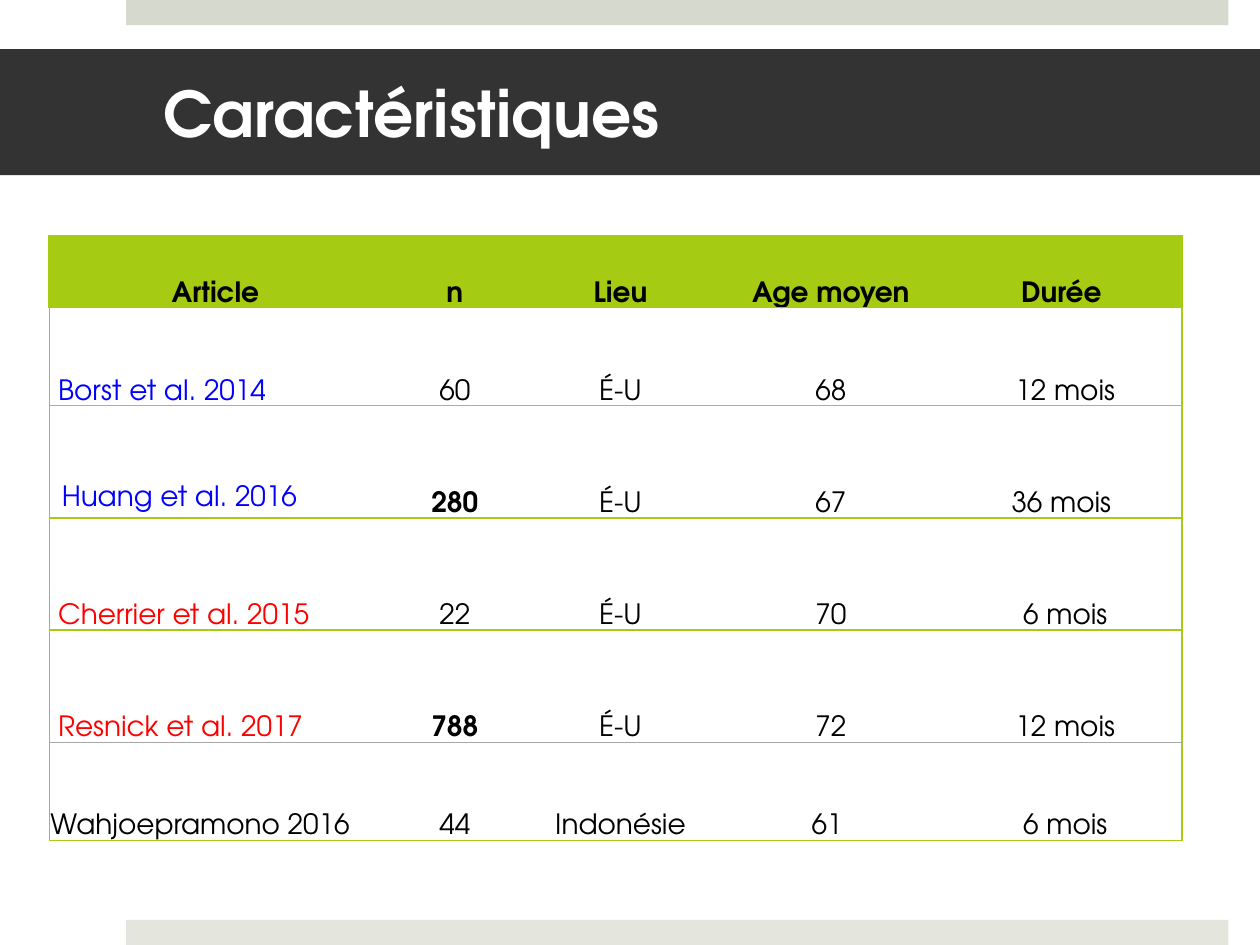
from dataclasses import dataclass
from typing import Optional

import pptx
import pptx.dml.color
import pptx.enum.shapes
import pptx.enum.text
import pptx.oxml
import pptx.oxml.ns
import pptx.util

Inches = pptx.util.Inches
Pt = pptx.util.Pt


@dataclass(frozen=True)
class Theme:
    font: str = "TeX Gyre Adventor"
    title_size: int = 36
    table_size: int = 16
    top_band: str = "D6D9CD"
    bottom_band: str = "E4E6DE"
    title_band: str = "333333"
    white: str = "FFFFFF"
    black: str = "000000"
    blue: str = "0000FF"
    red: str = "FF0000"
    green: str = "A5CC12"
    grey: str = "A6A6A6"


THEME = Theme()


@dataclass(frozen=True)
class Band:
    left: float
    top: float
    width: float
    height: float
    fill: str


@dataclass(frozen=True)
class Study:
    values: tuple[str, ...]
    height: float
    article_color: str = THEME.black
    bold_n: bool = False
    padded_article: bool = False


@dataclass(frozen=True)
class Border:
    color: str
    width: float


RULE = Border(THEME.green, 1)
HAIRLINE = Border(THEME.grey, 0.5)

TOP_BAND = Band(1, 0, 8.75, 0.2, THEME.top_band)
BOTTOM_BAND = Band(1, 7.3, 8.75, 0.2, THEME.bottom_band)
TITLE_BAND = Band(0, 0.39, 10, 1, THEME.title_band)

HEADINGS = ("Article", "n", "Lieu", "Age moyen", "Durée ")
HEADING_HEIGHT = 0.57
COLUMN_WIDTHS = (2.64, 1.16, 1.47, 1.87, 1.85)
STUDIES = (
    Study((" Borst et al. 2014", "60", "É-U", "68", "12 mois"), 0.78, THEME.blue),
    Study(("Huang et al. 2016", "280", "É-U", "67", "36 mois "), 0.89, THEME.blue,
          bold_n=True, padded_article=True),
    Study((" Cherrier et al. 2015", "22", "É-U", "70", "6 mois"), 0.89, THEME.red),
    Study((" Resnick et al. 2017", "788", "É-U", "72", "12 mois"), 0.89, THEME.red,
          bold_n=True),
    Study(("Wahjoepramono 2016", "44", "Indonésie", "61 ", "6 mois"), 0.78),
)


def rgb(color: str) -> pptx.dml.color.RGBColor:
    return pptx.dml.color.RGBColor.from_string(color)


def style_text(paragraph, size: float, color: str, bold: bool) -> None:
    for run in paragraph.runs:
        run.font.name = THEME.font
        run.font.size = Pt(size)
        run.font.bold = bold
        run.font.color.rgb = rgb(color)


def draw_band(slide, band: Band):
    shape = slide.shapes.add_shape(
        pptx.enum.shapes.MSO_SHAPE.RECTANGLE,
        Inches(band.left), Inches(band.top), Inches(band.width), Inches(band.height))
    shape.shadow.inherit = False
    shape.fill.solid()
    shape.fill.fore_color.rgb = rgb(band.fill)
    shape.line.fill.background()
    return shape


def draw_title(slide, title: str) -> None:
    frame = draw_band(slide, TITLE_BAND).text_frame
    frame.text = title
    frame.word_wrap = True
    frame.vertical_anchor = pptx.enum.text.MSO_ANCHOR.MIDDLE
    frame.margin_left, frame.margin_right = Inches(1.3), Inches(0.3)
    frame.margin_top = frame.margin_bottom = Inches(0.05)
    paragraph = frame.paragraphs[0]
    paragraph.alignment = pptx.enum.text.PP_ALIGN.LEFT
    style_text(paragraph, THEME.title_size, THEME.white, True)


def set_borders(cell, left: Optional[Border], right: Optional[Border],
                top: Optional[Border], bottom: Optional[Border]) -> None:
    properties = cell._tc.get_or_add_tcPr()
    sides = zip(("lnL", "lnR", "lnT", "lnB"), (left, right, top, bottom))
    for position, (tag, border) in enumerate(sides):
        width = Pt(border.width) if border else 0
        paint = (f'<a:solidFill><a:srgbClr val="{border.color}"/></a:solidFill>'
                 if border else "<a:noFill/>")
        properties.insert(position, pptx.oxml.parse_xml(
            f'<a:{tag} {pptx.oxml.ns.nsdecls("a")} w="{width}">{paint}</a:{tag}>'))


def fill_cell(cell, text: str, color: str, bold: bool, centred: bool,
              padded: bool, fill: Optional[str]) -> None:
    cell.text_frame.text = text
    cell.vertical_anchor = pptx.enum.text.MSO_ANCHOR.BOTTOM
    cell.margin_left = cell.margin_right = Inches(0.1 if padded else 0.01)
    cell.margin_top = Inches(0.05 if padded else 0.01)
    cell.margin_bottom = Inches(0.05 if padded else 0)
    paragraph = cell.text_frame.paragraphs[0]
    align = pptx.enum.text.PP_ALIGN
    paragraph.alignment = align.CENTER if centred else align.LEFT
    style_text(paragraph, THEME.table_size, color, bold)
    if fill:
        cell.fill.solid()
        cell.fill.fore_color.rgb = rgb(fill)
    else:
        cell.fill.background()


def draw_studies(slide) -> None:
    heights = (HEADING_HEIGHT, *(study.height for study in STUDIES))
    table = slide.shapes.add_table(
        len(heights), len(HEADINGS), Inches(0.39), Inches(1.87),
        Inches(sum(COLUMN_WIDTHS)), Inches(sum(heights))).table
    table.first_row = table.horz_banding = False
    for column, width in zip(table.columns, COLUMN_WIDTHS):
        column.width = Inches(width)
    for row, height in zip(table.rows, heights):
        row.height = Inches(height)

    rules = [RULE] * (len(heights) + 1)
    rules[-2] = HAIRLINE
    last = len(HEADINGS) - 1

    for column, heading in enumerate(HEADINGS):
        fill_cell(table.cell(0, column), heading, THEME.black, True, True, False, THEME.green)
    for row, study in enumerate(STUDIES, start=1):
        for column, value in enumerate(study.values):
            is_article = column == 0
            fill_cell(table.cell(row, column), value,
                      study.article_color if is_article else THEME.black,
                      study.bold_n and column == 1, not is_article,
                      study.padded_article and is_article, None)
    for row in range(len(heights)):
        for column in range(len(HEADINGS)):
            left = (HAIRLINE if row else RULE) if column == 0 else None
            set_borders(table.cell(row, column), left,
                        RULE if column == last else None, rules[row], rules[row + 1])


def main() -> None:
    presentation = pptx.Presentation()
    presentation.slide_width, presentation.slide_height = Inches(10), Inches(7.5)
    slide = presentation.slides.add_slide(presentation.slide_layouts[6])
    for band in (TOP_BAND, BOTTOM_BAND):
        draw_band(slide, band)
    draw_title(slide, "Caractéristiques")
    draw_studies(slide)
    presentation.save("out.pptx")


if __name__ == "__main__":
    main()
